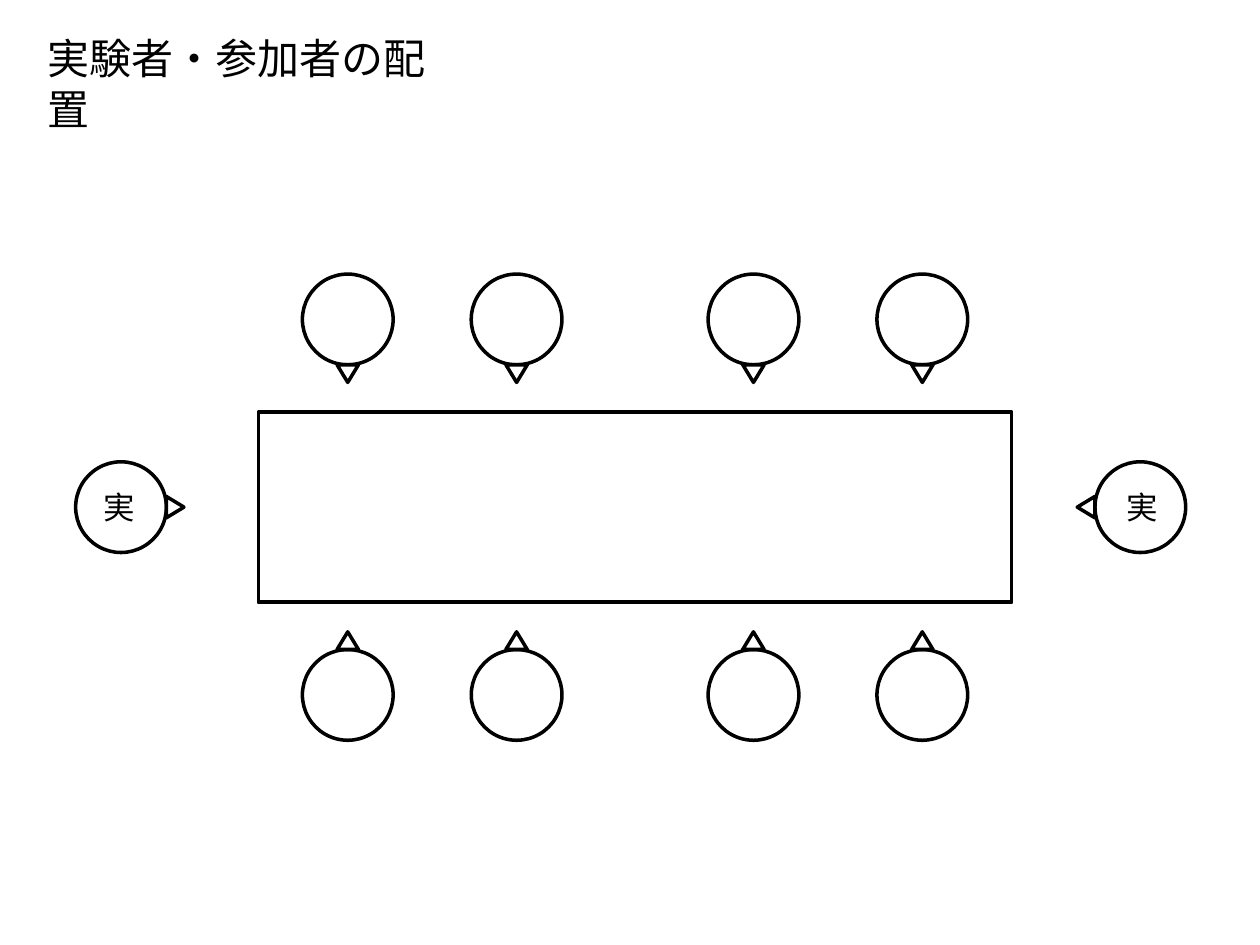
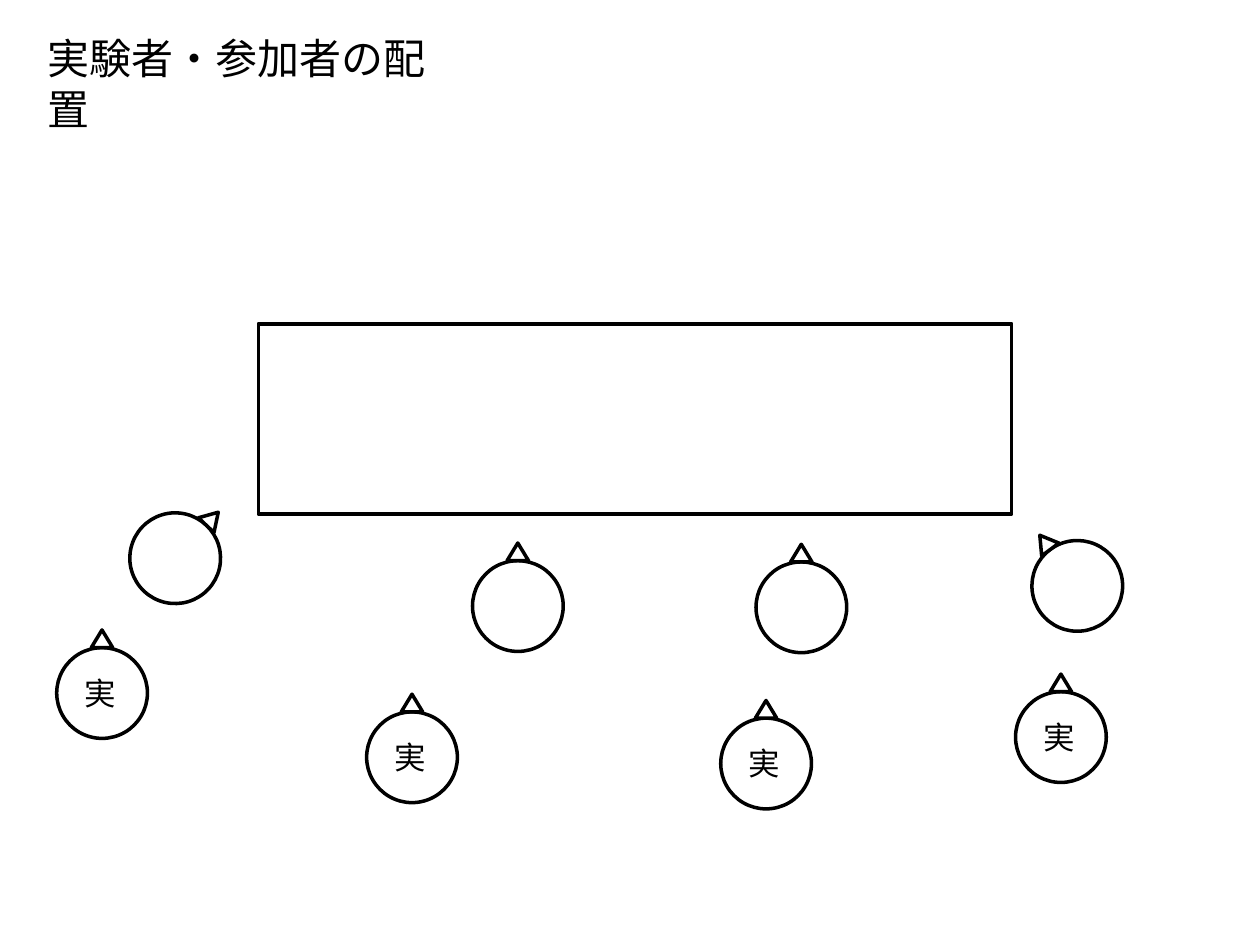
from dataclasses import dataclass
from math import cos, radians, sin

from pptx import Presentation
from pptx.dml.color import RGBColor
from pptx.enum.shapes import MSO_SHAPE as SHAPE
from pptx.enum.text import MSO_ANCHOR, MSO_AUTO_SIZE, PP_ALIGN
from pptx.util import Inches, Pt


@dataclass(frozen=True)
class Theme:
    ink: RGBColor = RGBColor(0, 0, 0)
    paper: RGBColor = RGBColor(255, 255, 255)
    font: str = "Calibri"
    title_size: int = 24
    label_size: int = 18
    line_width: int = 2


THEME = Theme()
TITLE = "実験者・参加者の配置"
EXPERIMENTER = "実"

# Sizes in inches
HEAD = 0.72
NOSE_W, NOSE_H = 0.17, 0.14
LABEL_W, LABEL_H = 0.45, 0.4
TABLE_W, TABLE_H = 5.98, 1.51


def style_text(sp, text, size):
    tf = sp.text_frame
    tf.text = text
    tf.word_wrap = False
    tf.auto_size = MSO_AUTO_SIZE.SHAPE_TO_FIT_TEXT
    tf.vertical_anchor = MSO_ANCHOR.TOP
    p = tf.paragraphs[0]
    p.alignment = PP_ALIGN.LEFT
    font = p.runs[0].font
    font.name, font.size = THEME.font, Pt(size)
    font.color.rgb = THEME.ink


def add_outline(shapes, kind, cx, cy, w, h, angle=0):
    """Add a white shape with a black outline, centred on (cx, cy)."""
    sp = shapes.add_shape(kind, Inches(cx - w / 2), Inches(cy - h / 2),
                          Inches(w), Inches(h))
    sp.rotation = angle
    sp.shadow.inherit = False
    sp.fill.solid()
    sp.fill.fore_color.rgb = THEME.paper
    sp.line.color.rgb = THEME.ink
    sp.line.width = Pt(THEME.line_width)


def add_person(slide, cx, cy, angle=0, label=None, label_dx=-0.01):
    """Add a head whose nose points along angle, clockwise from up."""
    shapes = slide.shapes.add_group_shape().shapes
    add_outline(shapes, SHAPE.OVAL, cx, cy, HEAD, HEAD, angle)
    reach = (HEAD + NOSE_H) / 2
    turn = radians(angle)
    add_outline(shapes, SHAPE.ISOSCELES_TRIANGLE, cx + reach * sin(turn),
                cy - reach * cos(turn), NOSE_W, NOSE_H, angle)
    if label:
        sp = shapes.add_textbox(Inches(cx + label_dx - LABEL_W / 2),
                                Inches(cy - LABEL_H / 2),
                                Inches(LABEL_W), Inches(LABEL_H))
        style_text(sp, label, THEME.label_size)


def add_table_top(slide, left, top):
    add_outline(slide.shapes, SHAPE.RECTANGLE, left + TABLE_W / 2,
                top + TABLE_H / 2, TABLE_W, TABLE_H)


def add_titled_slide(prs):
    slide = prs.slides.add_slide(prs.slide_layouts[5])
    title = slide.shapes.title
    title.left, title.top = Inches(0.28), Inches(0.21)
    title.width, title.height = Inches(3.4), Inches(0.5)
    style_text(title, TITLE, THEME.title_size)
    return slide


def build_facing_slide(prs, left, top):
    """Participants on both long sides, experimenters at the ends."""
    slide = add_titled_slide(prs)
    add_table_top(slide, left, top)
    middle = top + TABLE_H / 2

    # Two seats at each end of a side, mirrored about the table's centre
    seats = [0.71, 2.05, TABLE_W - 2.05, TABLE_W - 0.71]
    for side, angle in ((-1, 180), (1, 0)):
        for seat in seats:
            add_person(slide, left + seat, middle + side * 1.49, angle)

    # Experimenters
    add_person(slide, left - 1.09, middle, 90, EXPERIMENTER)
    add_person(slide, left + TABLE_W + 1.02, middle, 270, EXPERIMENTER, 0.02)


def build_one_side_slide(prs, left, top):
    """Participants along the near side, an experimenter behind each."""
    slide = add_titled_slide(prs)
    add_table_top(slide, left, top)

    # Centres relative to the table's corner
    participants = [(-0.66, 1.86, 43.2), (2.06, 2.24, 0),
                    (4.31, 2.25, 0), (6.5, 2.08, 323.5)]
    experimenters = [(-1.24, 2.93), (1.22, 3.44), (4.03, 3.49), (6.37, 3.28)]
    for dx, dy, angle in participants:
        add_person(slide, left + dx, top + dy, angle)
    for dx, dy in experimenters:
        add_person(slide, left + dx, top + dy, label=EXPERIMENTER)


def main():
    prs = Presentation()
    prs.slide_width, prs.slide_height = Inches(10), Inches(7.5)
    build_facing_slide(prs, 2.05, 3.27)
    build_one_side_slide(prs, 2.05, 2.57)
    prs.save("out.pptx")


if __name__ == "__main__":
    main()
